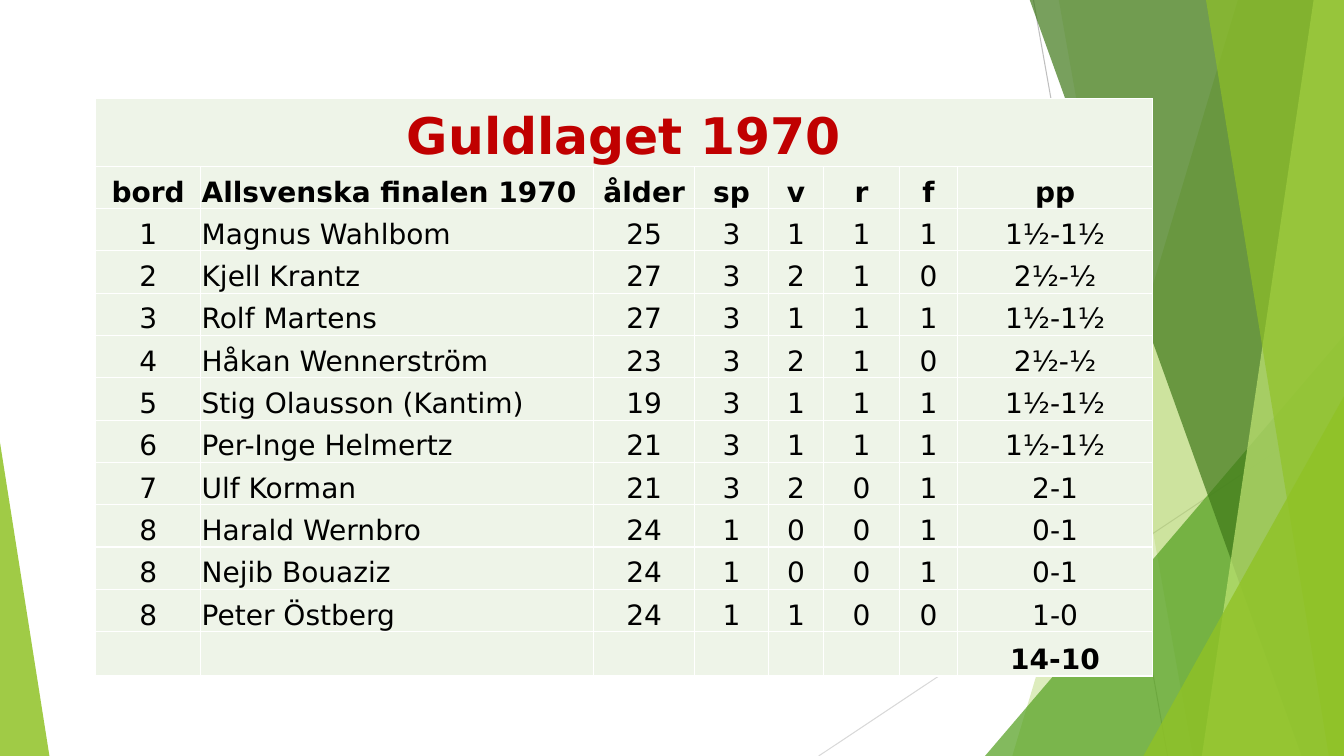
from lxml.etree import SubElement
from pptx import Presentation
from pptx.dml.color import RGBColor
from pptx.enum.shapes import MSO_CONNECTOR as Connector, MSO_SHAPE as Shape
from pptx.enum.text import MSO_ANCHOR as Anchor, PP_ALIGN as Align
from pptx.oxml.ns import qn
from pptx.util import Inches, Pt

WHITE = RGBColor(0xFF, 0xFF, 0xFF)
BLACK = RGBColor(0x00, 0x00, 0x00)
RED = RGBColor(0xC0, 0x00, 0x00)
PALE_GREEN = RGBColor(0xEE, 0xF4, 0xE8)
LIME = RGBColor(0x90, 0xC2, 0x26)
LEAF = RGBColor(0x54, 0xA0, 0x21)
FOREST = RGBColor(0x3F, 0x78, 0x19)
LIGHT_LIME = RGBColor(0xC0, 0xE4, 0x74)
GRAY = RGBColor(0xBF, 0xBF, 0xBF)
LIGHT_GRAY = RGBColor(0xD9, 0xD9, 0xD9)

WIDTH, HEIGHT = 13.33, 7.5
FACET_TOP = -0.01

COLUMN_WIDTHS = [1.04, 3.9, 1, 0.73, 0.55, 0.75, 0.58, 1.93]
ROW_HEIGHTS = [0.67] + [0.42] * 11 + [0.44]
NAME_COLUMN = 1
TITLE = "Guldlaget 1970"
HEADINGS = ["bord", "Allsvenska finalen 1970", "ålder", "sp", "v", "r", "f", "pp"]
PLAYERS = [
    ["1", "Magnus Wahlbom", "25", "3", "1", "1", "1", "1½-1½"],
    ["2", "Kjell Krantz", "27", "3", "2", "1", "0", "2½-½"],
    ["3", "Rolf Martens", "27", "3", "1", "1", "1", "1½-1½"],
    ["4", "Håkan Wennerström", "23", "3", "2", "1", "0", "2½-½"],
    ["5", "Stig Olausson (Kantim)", "19", "3", "1", "1", "1", "1½-1½"],
    ["6", "Per-Inge Helmertz", "21", "3", "1", "1", "1", "1½-1½"],
    ["7", "Ulf Korman", "21", "3", "2", "0", "1", "2-1"],
    ["8", "Harald Wernbro", "24", "1", "0", "0", "1", "0-1"],
    ["8", "Nejib Bouaziz", "24", "1", "0", "0", "1", "0-1"],
    ["8", "Peter Östberg", "24", "1", "1", "0", "0", "1-0"],
]
TOTAL = [""] * 7 + ["14-10"]


class SlideBuilder:
    font = "DejaVu Sans"
    body_size = Pt(20)
    title_size = Pt(36)

    def __init__(self, page):
        self.page = page

    def line(self, start, end, color):
        points = [Inches(value) for value in (*start, *end)]
        line = self.page.shapes.add_connector(Connector.STRAIGHT, *points)
        line.line.color.rgb = color
        line.line.width = Pt(0.75)
        SubElement(line._element.spPr, qn("a:effectLst"))

    def paint(self, shape, color, opacity):
        shape.shadow.inherit = False
        shape.fill.solid()
        shape.fill.fore_color.rgb = color
        shape.line.fill.background()
        color_element = shape._element.spPr.find(qn("a:solidFill"))[0]
        SubElement(color_element, qn("a:alpha"), val=str(opacity * 1000))

    def facet(self, top_left, bottom_left, color, opacity):
        """Band from a slanted left side to the right edge of the slide."""
        corners = [(top_left, FACET_TOP), (WIDTH, FACET_TOP),
                   (WIDTH, HEIGHT), (bottom_left, HEIGHT)]
        start, *rest = [(Inches(x), Inches(y)) for x, y in corners]
        outline = self.page.shapes.build_freeform(*start)
        outline.add_line_segments(rest, close=True)
        self.paint(outline.convert_to_shape(), color, opacity)

    def triangle(self, left, top, width, apex, color, opacity):
        """Triangle standing on the bottom edge of the slide."""
        shape = self.page.shapes.add_shape(
            Shape.ISOSCELES_TRIANGLE, Inches(left), Inches(top),
            Inches(width), Inches(HEIGHT - top))
        shape.adjustments[0] = apex
        self.paint(shape, color, opacity)

    def cell(self, cell, text, align, bold=False, size=None, color=BLACK):
        cell.margin_left = cell.margin_right = cell.margin_top = Inches(0.01)
        cell.margin_bottom = 0
        cell.vertical_anchor = Anchor.BOTTOM
        properties = cell._tc.get_or_add_tcPr()
        for side in ("a:lnL", "a:lnR", "a:lnT", "a:lnB"):
            border = SubElement(properties, qn(side), w=str(Pt(1)))
            fill = SubElement(border, qn("a:solidFill"))
            SubElement(fill, qn("a:srgbClr"), val=str(WHITE))
        cell.fill.solid()
        cell.fill.fore_color.rgb = PALE_GREEN
        paragraph = cell.text_frame.paragraphs[0]
        paragraph.text = text
        paragraph.alignment = align
        for span in paragraph.runs:
            span.font.name = self.font
            span.font.size = size or self.body_size
            span.font.bold = bold
            span.font.color.rgb = color

    def table(self, left, top):
        rows = [HEADINGS, *PLAYERS, TOTAL]
        table = self.page.shapes.add_table(
            len(ROW_HEIGHTS), len(COLUMN_WIDTHS), Inches(left), Inches(top),
            Inches(sum(COLUMN_WIDTHS)), Inches(sum(ROW_HEIGHTS))).table
        for column, width in zip(table.columns, COLUMN_WIDTHS):
            column.width = Inches(width)
        for row, height in zip(table.rows, ROW_HEIGHTS):
            row.height = Inches(height)

        table.cell(0, 0).merge(table.cell(0, len(COLUMN_WIDTHS) - 1))
        self.cell(table.cell(0, 0), TITLE, Align.CENTER, True, self.title_size, RED)
        for row_index, values in enumerate(rows, 1):
            bold = values in (HEADINGS, TOTAL)
            for column_index, text in enumerate(values):
                align = Align.LEFT if column_index == NAME_COLUMN else Align.CENTER
                self.cell(table.cell(row_index, column_index), text, align, bold)


def main():
    deck = Presentation()
    deck.slide_width, deck.slide_height = Inches(WIDTH), Inches(HEIGHT)
    builder = SlideBuilder(deck.slides.add_slide(deck.slide_layouts[6]))

    # Thin background lines
    builder.line((10.25, 0), (11.58, HEIGHT), GRAY)
    builder.line((WIDTH, 4.03), (8.12, HEIGHT), LIGHT_GRAY)

    # Green facets, back to front
    builder.facet(12.28, 10.04, LIME, 30)
    builder.facet(10.5, 11.83, LIME, 20)
    builder.triangle(9.77, 3.33, 3.56, 1, LEAF, 72)
    builder.facet(10.21, 12.91, FOREST, 70)
    builder.facet(13.03, 11.92, LIGHT_LIME, 70)
    builder.facet(11.96, 13.18, LIME, 65)
    builder.triangle(11.34, 3.93, 1.99, 1, LIME, 80)
    builder.triangle(0, 4.39, 0.49, 0, LIME, 85)

    # Team results
    builder.table(0.95, 0.98)

    deck.save("out.pptx")


if __name__ == "__main__":
    main()
